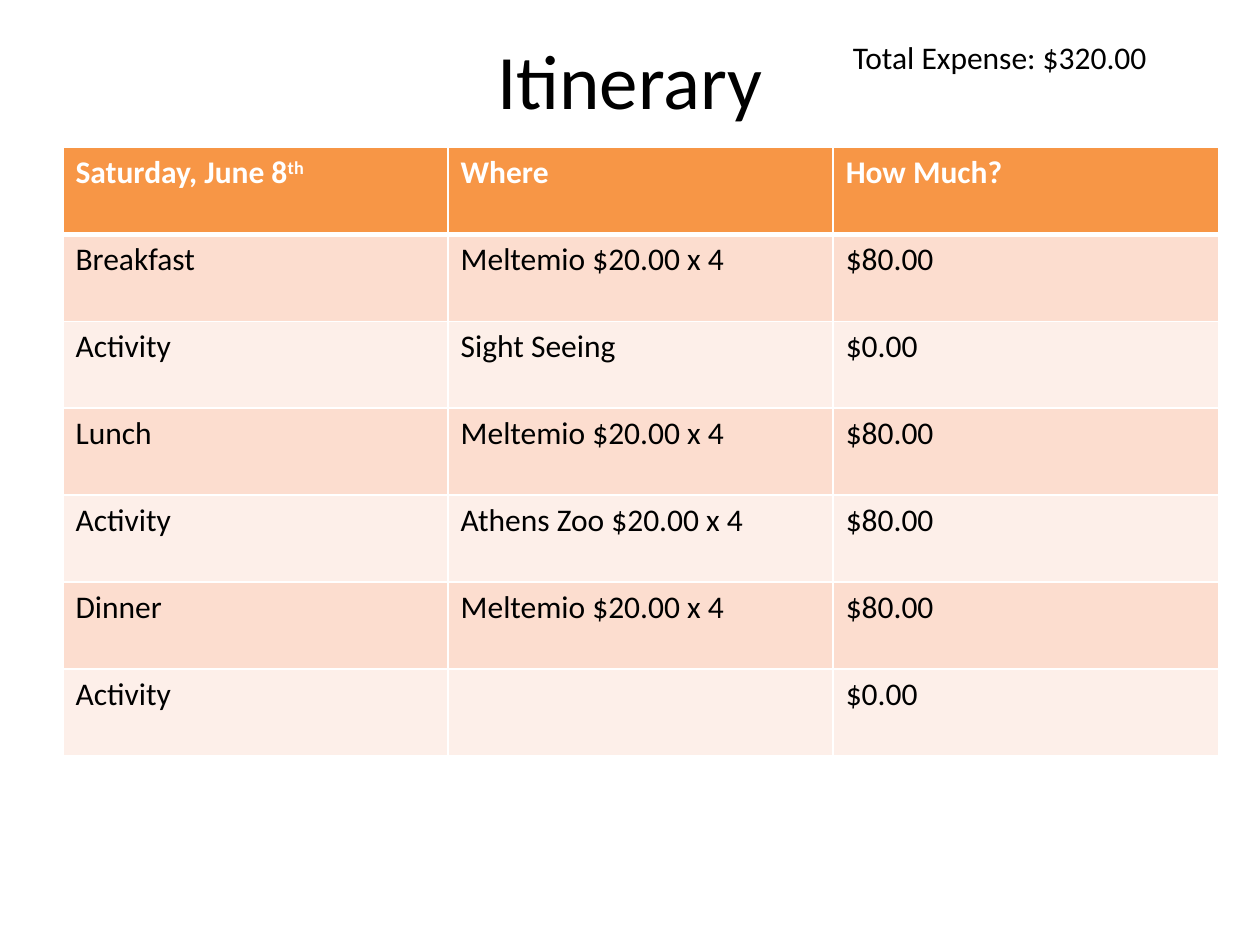
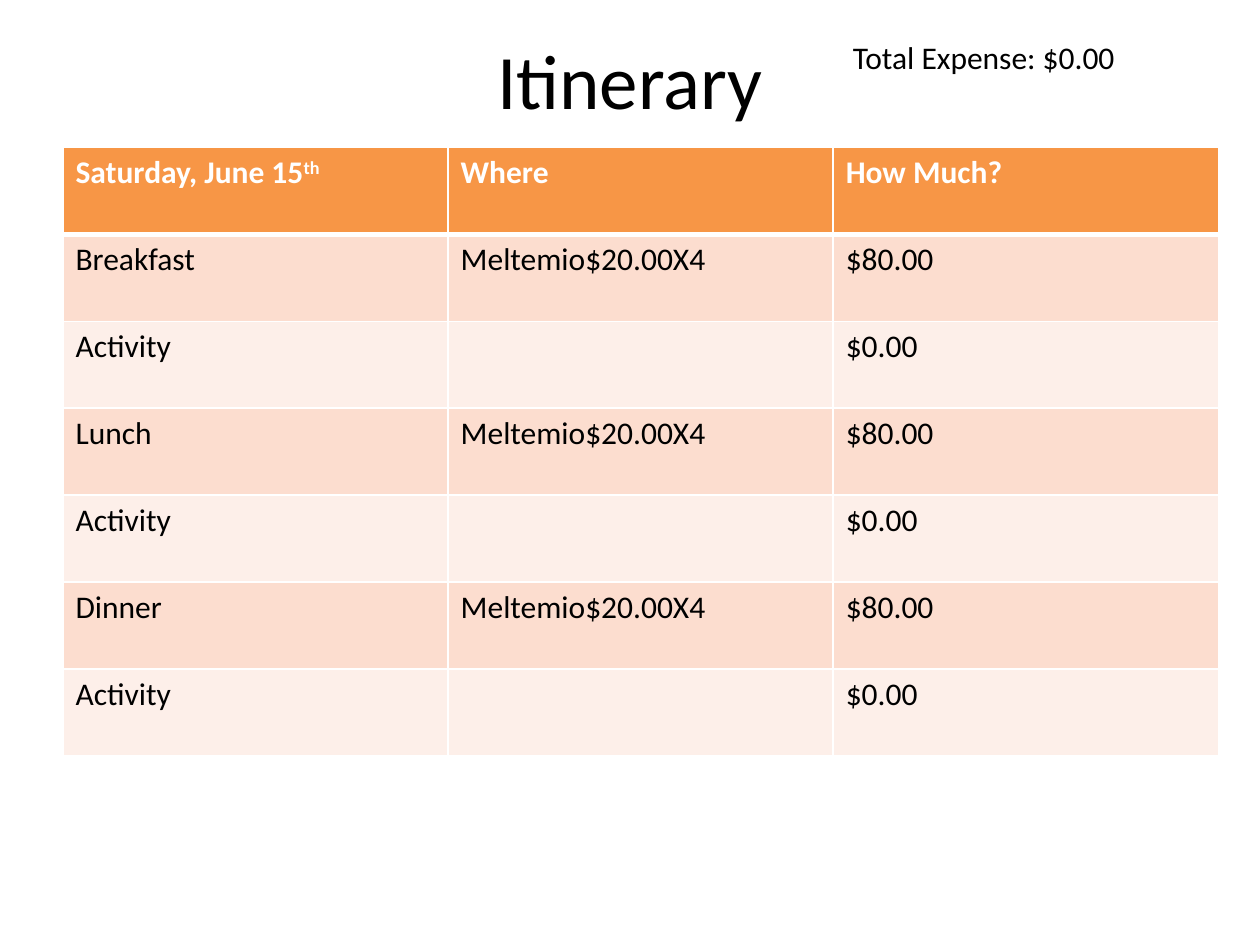
from lxml import etree
from pptx import Presentation
from pptx.dml.color import RGBColor
from pptx.enum import text
from pptx.oxml import ns
from pptx.util import Inches, Pt

BLACK = RGBColor(0x00, 0x00, 0x00)
WHITE = RGBColor(0xFF, 0xFF, 0xFF)
ORANGE = RGBColor(0xF7, 0x96, 0x46)
PEACH = RGBColor(0xFC, 0xDD, 0xCF)
PALE_PEACH = RGBColor(0xFD, 0xEF, 0xE9)

TITLE_FORMAT = {"name": "Calibri", "size": Pt(44)}
BODY_FORMAT = {"name": "Calibri", "size": Pt(18), "bold": False}
HEADER_FORMAT = {**BODY_FORMAT, "bold": True}

COLUMN_WIDTH = 9.17 / 3
ROW_HEIGHT = 0.69

ITINERARIES = [
    (
        "Saturday, June 8",
        "$320.00",
        [
            ("Breakfast", "Meltemio $20.00 x 4", "$80.00"),
            ("Activity", "Sight Seeing", "$0.00"),
            ("Lunch", "Meltemio $20.00 x 4", "$80.00"),
            ("Activity", "Athens Zoo $20.00 x 4", "$80.00"),
            ("Dinner", "Meltemio $20.00 x 4", "$80.00"),
            ("Activity", "", "$0.00"),
        ],
    ),
    (
        "Saturday, June 15",
        "$0.00",
        [
            ("Breakfast", "Meltemio$20.00X4", "$80.00"),
            ("Activity", "", "$0.00"),
            ("Lunch", "Meltemio$20.00X4", "$80.00"),
            ("Activity", "", "$0.00"),
            ("Dinner", "Meltemio$20.00X4", "$80.00"),
            ("Activity", "", "$0.00"),
        ],
    ),
]


class ItineraryDeck:
    def __init__(self):
        self.presentation = Presentation()
        self.presentation.slide_width = Inches(10)
        self.presentation.slide_height = Inches(7.5)
        self.slide = None

    def add_slide(self):
        self.slide = self.presentation.slides.add_slide(self.presentation.slide_layouts[6])
        background = self.slide.background.fill
        background.solid()
        background.fore_color.rgb = WHITE

    def add_run(self, paragraph, words, font_format, color):
        run = paragraph.add_run()
        run.text = words
        for attribute, value in font_format.items():
            setattr(run.font, attribute, value)
        run.font.color.rgb = color
        return run

    def add_text(self, words, left, top, width, height, font_format, **frame_format):
        box = self.slide.shapes.add_textbox(
            Inches(left), Inches(top), Inches(width), Inches(height)
        )
        frame = box.text_frame
        for attribute, value in {"word_wrap": True, **frame_format}.items():
            setattr(frame, attribute, value)
        self.add_run(frame.paragraphs[0], words, font_format, BLACK)
        return frame

    def add_title(self, words):
        frame = self.add_text(
            words, 0.5, 0, 9, 1.25, TITLE_FORMAT,
            vertical_anchor=text.MSO_ANCHOR.MIDDLE,
        )
        frame.paragraphs[0].alignment = text.PP_ALIGN.CENTER

    def add_total(self, amount):
        self.add_text(
            f"Total Expense: {amount}", 6.67, 0.25, 3.08, 0.4, BODY_FORMAT,
            auto_size=text.MSO_AUTO_SIZE.SHAPE_TO_FIT_TEXT,
        )

    def add_borders(self, cell, row_index):
        widths = {
            "L": 1,
            "R": 1,
            "T": 3 if row_index == 1 else 1,
            "B": 3 if row_index == 0 else 1,
        }
        properties = cell._tc.get_or_add_tcPr()
        for side, width in widths.items():
            line = etree.SubElement(properties, ns.qn(f"a:ln{side}"), w=str(Pt(width)))
            fill = etree.SubElement(line, ns.qn("a:solidFill"))
            etree.SubElement(fill, ns.qn("a:srgbClr"), val=str(WHITE))

    def add_cell(self, cell, words, row_index):
        self.add_borders(cell, row_index)
        cell.fill.solid()
        if row_index == 0:
            fill_color, font_format, font_color = ORANGE, HEADER_FORMAT, WHITE
        else:
            fill_color = PEACH if row_index % 2 else PALE_PEACH
            font_format, font_color = BODY_FORMAT, BLACK
        cell.fill.fore_color.rgb = fill_color
        paragraph = cell.text_frame.paragraphs[0]
        if words:
            self.add_run(paragraph, words, font_format, font_color)
        else:
            paragraph.font.size = font_format["size"]

    def add_itinerary(self, day, entries):
        rows = [(day, "Where", "How Much?"), *entries]
        table = self.slide.shapes.add_table(
            len(rows), 3, Inches(0.5), Inches(1.17),
            Inches(3 * COLUMN_WIDTH), Inches(len(rows) * ROW_HEIGHT),
        ).table
        for column in table.columns:
            column.width = Inches(COLUMN_WIDTH)
        for row_index, row in enumerate(rows):
            table.rows[row_index].height = Inches(ROW_HEIGHT)
            for column_index, words in enumerate(row):
                self.add_cell(table.cell(row_index, column_index), words, row_index)
        day_paragraph = table.cell(0, 0).text_frame.paragraphs[0]
        suffix = self.add_run(day_paragraph, "th", HEADER_FORMAT, WHITE)
        suffix._r.get_or_add_rPr().set("baseline", "30000")


def main():
    deck = ItineraryDeck()
    for day, total, entries in ITINERARIES:
        deck.add_slide()
        deck.add_title("Itinerary")
        deck.add_total(total)
        deck.add_itinerary(day, entries)
    deck.presentation.save("out.pptx")


if __name__ == "__main__":
    main()
